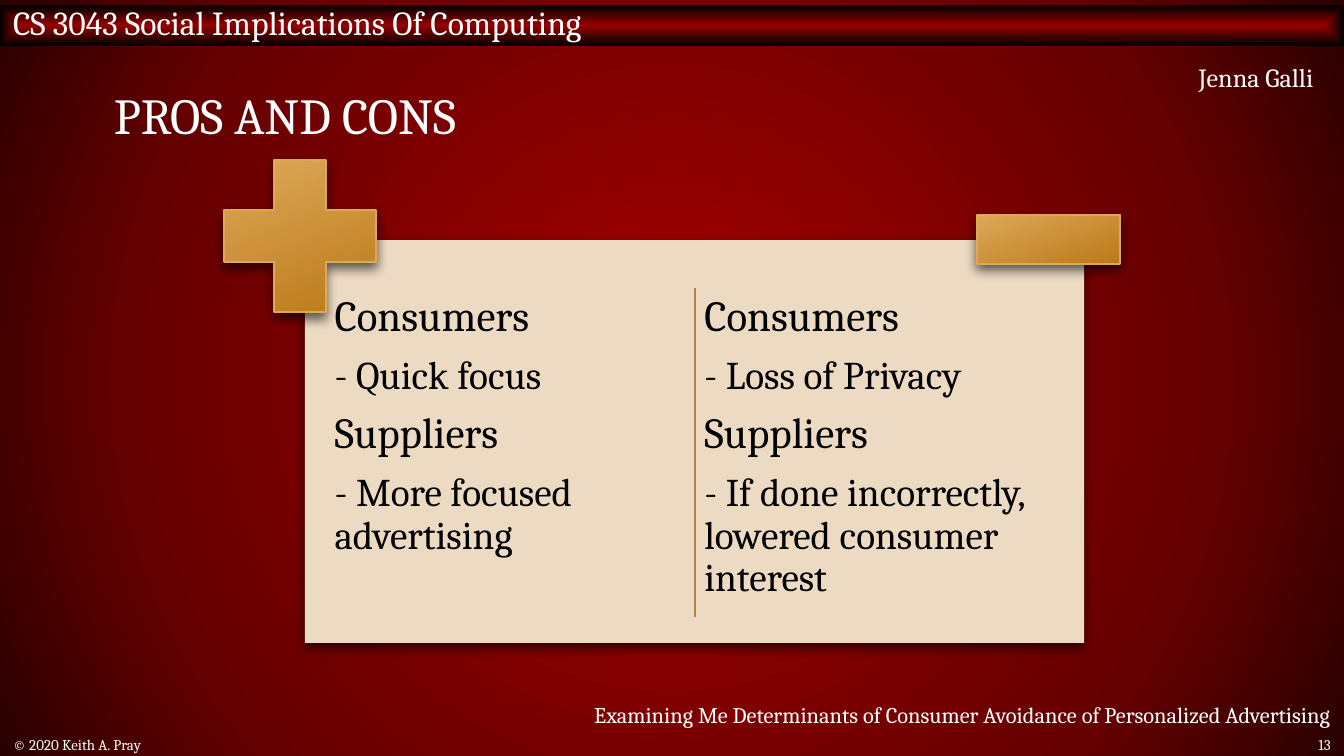
import pptx
import pptx.util
import pptx.dml.color
import pptx.enum.shapes
import pptx.enum.text
import pptx.oxml
import pptx.oxml.ns

Pt = pptx.util.Pt
Shape = pptx.enum.shapes.MSO_SHAPE
Align = pptx.enum.text.PP_ALIGN
Anchor = pptx.enum.text.MSO_ANCHOR
namespace = pptx.oxml.ns.nsdecls("a")
qn = pptx.oxml.ns.qn


def color(value):
    return pptx.dml.color.RGBColor.from_string(value)


def set_gradient(fill, properties, stops, direction):
    fill.solid()
    stop_xml = "".join(
        f'<a:gs pos="{position * 1000}"><a:srgbClr val="{value}"/></a:gs>'
        for position, value in stops
    )
    gradient = pptx.oxml.parse_xml(
        f'<a:gradFill {namespace} rotWithShape="1"><a:gsLst>{stop_xml}</a:gsLst>{direction}</a:gradFill>'
    )
    properties.replace(properties.find(qn("a:solidFill")), gradient)


deck = pptx.Presentation()
deck.slide_width = Pt(720)
deck.slide_height = Pt(405)
page = deck.slides.add_slide(deck.slide_layouts[6])

centered = '<a:path path="{}"><a:fillToRect l="50000" t="50000" r="50000" b="50000"/></a:path>'
background_fill = page.background.fill
background_fill.solid()
set_gradient(
    background_fill,
    page._element.find(".//" + qn("p:bgPr")),
    [(17, "960000"), (71, "650000"), (100, "290000")],
    centered.format("circle"),
)

banner_stops = [(0, "960000"), (100, "000000")]
gold_stops = [(0, "DDA859"), (100, "BB7A19")]
gold_direction = '<a:lin ang="4140000" scaled="0"/>'
shapes = {}
for name, kind, bounds, stops, direction, outline, shadow in [
    ("banner", Shape.RECTANGLE, (0, 2.9, 720, 21.6), banner_stops, centered.format("rect"), None, False),
    ("card", Shape.RECTANGLE, (163.3, 128.7, 417.6, 215.8), None, None, None, True),
    ("plus", Shape.CROSS, (120, 85.7, 81.6, 81.6), gold_stops, gold_direction, "DDA859", True),
    ("minus", Shape.RECTANGLE, (523.3, 115, 76.8, 26.3), gold_stops, gold_direction, "DDA859", True),
]:
    shape = page.shapes.add_shape(kind, *map(Pt, bounds))
    shapes[name] = shape
    if stops:
        set_gradient(shape.fill, shape._element.spPr, stops, direction)
    else:
        shape.fill.solid()
        shape.fill.fore_color.rgb = color("EDDAC3")
    if outline:
        shape.line.color.rgb = color(outline)
        shape.line.width = Pt(1)
    else:
        shape.line.fill.background()
    shape.shadow.inherit = False
    if shadow:
        shape._element.spPr.find(qn("a:effectLst")).append(pptx.oxml.parse_xml(
            f'<a:outerShdw {namespace} blurRad="{Pt(6)}" dist="{Pt(3)}" dir="5400000" rotWithShape="0">'
            '<a:srgbClr val="000000"><a:alpha val="60000"/></a:srgbClr></a:outerShdw>'
        ))
shapes["plus"].adjustments[0] = 0.33

divider = page.shapes.add_connector(
    pptx.enum.shapes.MSO_CONNECTOR.STRAIGHT, Pt(372.2), Pt(154.3), Pt(372.2), Pt(330.5)
)
divider.line.color.rgb = color("B18747")
divider.line.width = Pt(1)
divider._element.spPr.append(pptx.oxml.parse_xml(f"<a:effectLst {namespace}/>"))

for text, bounds, size, alignment, anchor, spacing, margins in [
    ("CS 3043 Social Implications Of Computing", None, 18, Align.LEFT, Anchor.MIDDLE, 1.0, (0, 3.6)),
    ("PROS AND CONS", (54, 28.4, 612, 72), 27, Align.LEFT, Anchor.MIDDLE, 0.8, (3.6, 3.6)),
    ("© 2020 Keith A. Pray", (0, 393.4, 437.8, 11.5), 8, Align.LEFT, Anchor.MIDDLE, 1.0, (0, 0)),
    ("13", (671, 393.4, 49, 11.5), 8, Align.RIGHT, Anchor.MIDDLE, 1.0, (0, 0)),
    ("Jenna Galli", (539.3, 29.5, 171.4, 24.5), 14, Align.RIGHT, Anchor.TOP, 1.0, (3.6, 3.6)),
    ("Examining Me Determinants of Consumer Avoidance of Personalized Advertising",
     (0, 372.2, 720, 21.6), 12, Align.RIGHT, Anchor.TOP, 1.0, (3.6, 3.6)),
]:
    box = page.shapes.add_textbox(*map(Pt, bounds)) if bounds else shapes["banner"]
    frame = box.text_frame
    frame_format = {
        "word_wrap": True,
        "vertical_anchor": anchor,
        "margin_top": Pt(margins[0]),
        "margin_bottom": Pt(margins[1]),
    }
    for key, value in frame_format.items():
        setattr(frame, key, value)
    para = frame.paragraphs[0]
    para.alignment = alignment
    para.line_spacing = spacing
    span = para.add_run()
    span.text = text
    for key, value in {"name": "Cambria", "size": Pt(size)}.items():
        setattr(span.font, key, value)
    span.font.color.rgb = color("FFFFFF")

for left, consumer_point, supplier_point in [
    (175.6, "- Quick focus", "- More focused advertising"),
    (373.7, "- Loss of Privacy", "- If done incorrectly, lowered consumer interest"),
]:
    frame = page.shapes.add_textbox(Pt(left), Pt(154), Pt(193.7), Pt(184.3)).text_frame
    frame.word_wrap = True
    for side in ("left", "top", "right", "bottom"):
        setattr(frame, f"margin_{side}", Pt(3.6))
    lines = ["Consumers", consumer_point, "Suppliers", supplier_point]
    for index, text in enumerate(lines):
        size = 21 if index % 2 else 23
        para = frame.add_paragraph() if index else frame.paragraphs[0]
        for key, value in {"line_spacing": 0.9, "space_after": Pt(0.35 * size)}.items():
            setattr(para, key, value)
        span = para.add_run()
        span.text = text
        for key, value in {"name": "Cambria", "size": Pt(size)}.items():
            setattr(span.font, key, value)
        span.font.color.rgb = color("000000")

deck.save("out.pptx")
